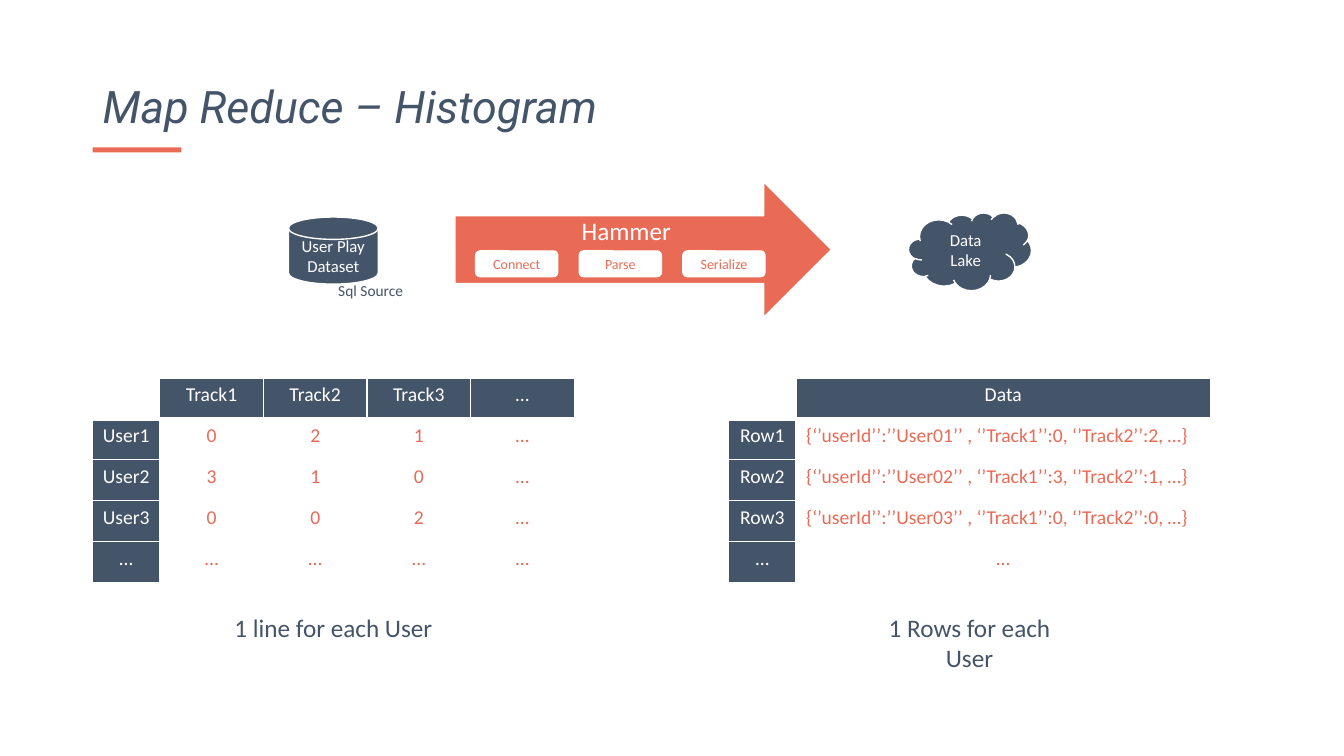
from lxml.etree import SubElement
from pptx import Presentation
from pptx.dml.color import RGBColor
from pptx.enum.shapes import MSO_SHAPE
from pptx.enum.text import MSO_ANCHOR, PP_ALIGN
from pptx.oxml.ns import qn
from pptx.util import Pt

SLATE = RGBColor(0x44, 0x54, 0x69)
CORAL = RGBColor(0xE9, 0x6B, 0x56)
WHITE = RGBColor(0xFF, 0xFF, 0xFF)

ROW_LABEL_WIDTH = 48
ROW_HEIGHT = 29.2


def style_text(frame, size, color, align=PP_ALIGN.CENTER, font="Calibri"):
    for para in frame.paragraphs:
        para.alignment = align
        for span in para.runs:
            span.font.size = Pt(size)
            span.font.name = font
            span.font.color.rgb = color


def add_block(shapes, kind, box, fill, text="", size=12, color=WHITE, outlined=True):
    block = shapes.add_shape(kind, *map(Pt, box))
    block.shadow.inherit = False
    block.fill.solid()
    block.fill.fore_color.rgb = fill
    if outlined:
        block.line.color.rgb = WHITE
        block.line.width = Pt(1)
    else:
        block.line.fill.background()
    if text:
        frame = block.text_frame
        frame.text = text
        frame.word_wrap = True
        frame.vertical_anchor = MSO_ANCHOR.MIDDLE
        style_text(frame, size, color)
    return block


def add_label(page, box, text, size, align=PP_ALIGN.CENTER):
    frame = page.shapes.add_textbox(*map(Pt, box)).text_frame
    frame.text = text
    frame.word_wrap = True
    style_text(frame, size, SLATE, align)


def add_title(page, box, text):
    title = page.shapes.title
    title.left, title.top, title.width, title.height = map(Pt, box)
    frame = title.text_frame
    frame.text = text
    frame.vertical_anchor = MSO_ANCHOR.BOTTOM
    para = frame.paragraphs[0]
    para.line_spacing = 0.9
    para.space_before = Pt(10)
    style_text(frame, 32, SLATE, PP_ALIGN.LEFT, "Roboto")
    para.runs[0].font.italic = True
    left, top, _, height = box
    add_block(page.shapes, MSO_SHAPE.RECTANGLE, (left, top + height + 6.5, 63.5, 3.6),
              CORAL, outlined=False)


def add_dataset(page, box):
    left, top, width, height = box
    add_block(page.shapes, MSO_SHAPE.FLOWCHART_MAGNETIC_DISK, box, SLATE, "User Play Dataset")
    add_label(page, (left + 28.5, top + height - 6, width, 21), "Sql Source", 11, PP_ALIGN.LEFT)


def add_hammer(page, box):
    """Draw the transfer arrow with its three evenly spaced steps."""
    left, top, _, _ = box
    group = page.shapes.add_group_shape()
    arrow = add_block(group.shapes, MSO_SHAPE.RIGHT_ARROW, box, CORAL, "Hammer", 18)
    arrow.text_frame.vertical_anchor = MSO_ANCHOR.TOP
    arrow.text_frame.margin_top = 0
    for index, step in enumerate(("Connect", "Parse", "Serialize")):
        step_box = (left + 14.8 + 74 * index, top + 49.5, 58.6, 18.3)
        add_block(group.shapes, MSO_SHAPE.ROUNDED_RECTANGLE, step_box, WHITE, step, 10, CORAL)


def set_borders(cell, top, bottom):
    """Give the cell white borders; top and bottom are widths in points."""
    properties = cell._tc.get_or_add_tcPr()
    widths = {"a:lnL": 1, "a:lnR": 1, "a:lnT": top, "a:lnB": bottom}
    for position, (tag, width) in enumerate(widths.items()):
        line = SubElement(properties, qn(tag), w=str(Pt(width)))
        SubElement(SubElement(line, qn("a:solidFill")), qn("a:srgbClr"), val=str(WHITE))
        properties.insert(position, line)


def add_grid(page, box, rows, left_aligned=False):
    """Draw a table with dark headings; left_aligned applies to data rows but the last."""
    _, _, width, _ = box
    last_row = len(rows) - 1
    data_columns = len(rows[0]) - 1
    grid = page.shapes.add_table(len(rows), data_columns + 1, *map(Pt, box)).table
    grid.first_row = grid.horz_banding = False
    for index, column in enumerate(grid.columns):
        column.width = Pt((width - ROW_LABEL_WIDTH) / data_columns if index else ROW_LABEL_WIDTH)
    for r, values in enumerate(rows):
        grid.rows[r].height = Pt(ROW_HEIGHT)
        for c, value in enumerate(values):
            cell = grid.cell(r, c)
            is_heading = (r == 0) != (c == 0)
            if is_heading:
                cell.fill.solid()
                cell.fill.fore_color.rgb = SLATE
            else:
                cell.fill.background()
            set_borders(cell, top=3 if r == 1 else 1, bottom=3 if r == 0 else 1)
            cell.text = value
            is_left = left_aligned and not is_heading and r < last_row
            style_text(cell.text_frame, 14, WHITE if is_heading else CORAL,
                       PP_ALIGN.LEFT if is_left else PP_ALIGN.CENTER)


def main():
    deck = Presentation()
    deck.slide_width, deck.slide_height = Pt(960), Pt(540)
    page = deck.slides.add_slide(deck.slide_layouts[5])

    add_title(page, (66.2, 13, 828, 85.7), "Map Reduce – Histogram")
    add_dataset(page, (206, 155, 64.2, 48))
    add_hammer(page, (325, 129.8, 269, 97))
    add_block(page.shapes, MSO_SHAPE.CLOUD, (649, 152, 87.8, 55.5), SLATE, "Data Lake")

    plays = [("", "Track1", "Track2", "Track3", "…"),
             ("User1", "0", "2", "1", "…"),
             ("User2", "3", "1", "0", "…"),
             ("User3", "0", "0", "2", "…"),
             ("…",) * 5]
    add_grid(page, (66.2, 270, 344, 146), plays)
    documents = [("", "Data"),
                 ("Row1", "{‘’userId’’:’’User01’’ , ‘’Track1’’:0, ‘’Track2’’:2, …}"),
                 ("Row2", "{‘’userId’’:’’User02’’ , ‘’Track1’’:3, ‘’Track2’’:1, …}"),
                 ("Row3", "{‘’userId’’:’’User03’’ , ‘’Track1’’:0, ‘’Track2’’:0, …}"),
                 ("…", "…")]
    add_grid(page, (520.6, 270, 344, 146), documents, left_aligned=True)
    add_label(page, (158.7, 433.5, 159, 29), "1 line for each User", 18)
    add_label(page, (613, 433.5, 159, 51), "1 Rows for each User", 18)

    deck.save("out.pptx")


if __name__ == "__main__":
    main()
